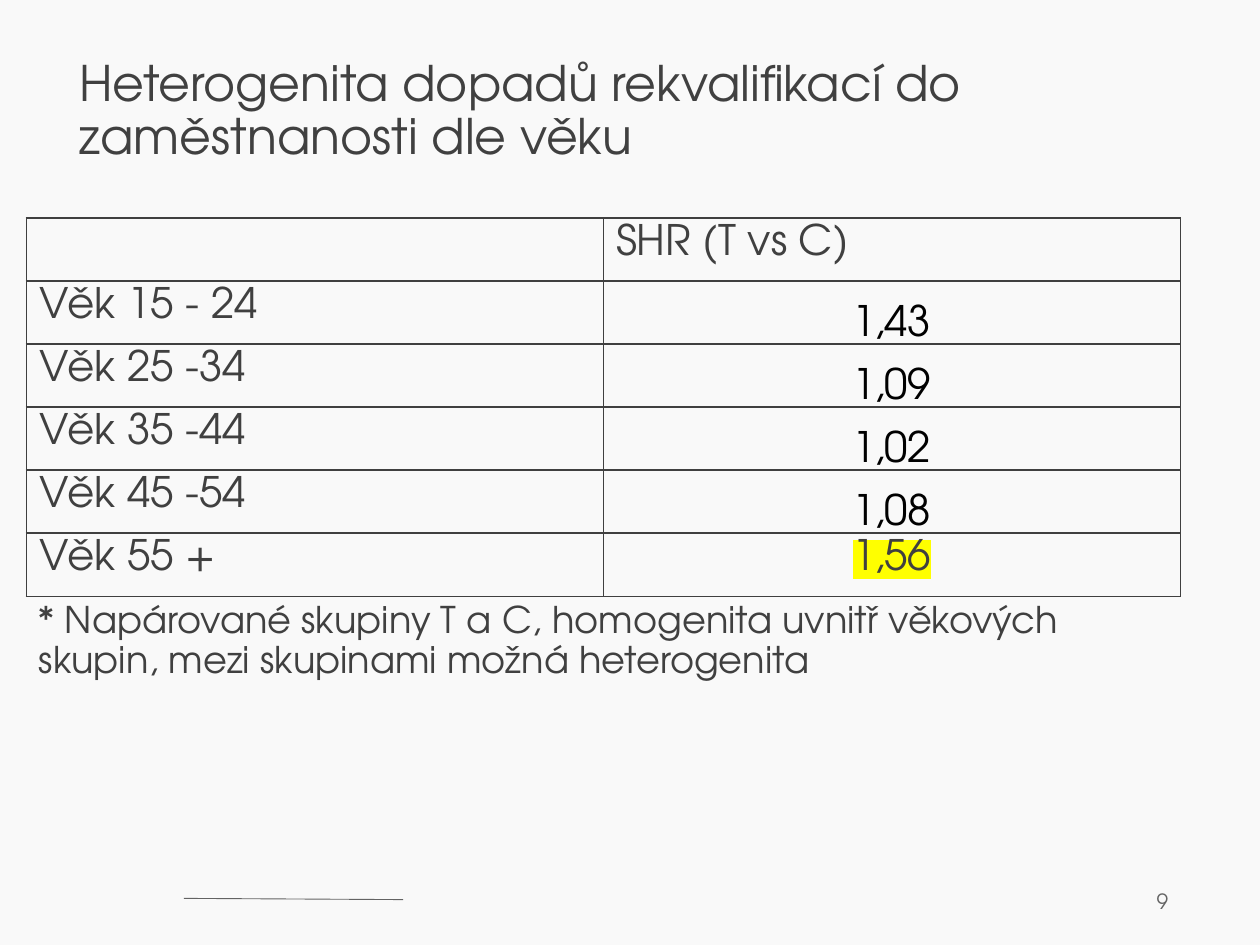
from typing import NamedTuple

from lxml import etree
from pptx import Presentation
from pptx import util as u
from pptx.dml.color import RGBColor
from pptx.enum import shapes, text
from pptx.oxml import ns

PAPER = RGBColor(0xF9, 0xF9, 0xF9)
INK = RGBColor(0x40, 0x40, 0x40)
MUTED = RGBColor(0x63, 0x63, 0x63)
BLACK = RGBColor(0, 0, 0)
YELLOW = RGBColor(0xFF, 0xFF, 0)
FONT = "TeX Gyre Adventor"
LEFT, CENTER, RIGHT = text.PP_ALIGN.LEFT, text.PP_ALIGN.CENTER, text.PP_ALIGN.RIGHT
TOP, MIDDLE, BOTTOM = text.MSO_ANCHOR.TOP, text.MSO_ANCHOR.MIDDLE, text.MSO_ANCHOR.BOTTOM
RATIO = dict(alignment=CENTER, line_spacing=1.1, space_after=u.Pt(12))
TIGHT = dict(margin_left=u.Inches(0.05), margin_right=u.Inches(0.05),
             margin_top=0, margin_bottom=0, vertical_anchor=BOTTOM)


class Label(NamedTuple):
    wording: str
    box: tuple
    size: float
    color: RGBColor = INK
    inset: tuple = (0.1, 0.05)
    anchor: text.MSO_ANCHOR = TOP
    paragraph: dict = dict(line_spacing=0.9)


class AgeGroup(NamedTuple):
    name: str
    ratio: str
    highlighted: bool = False


LABELS = [
    Label("9", (7.12, 6.95, 2.25, 0.4), 12, MUTED, anchor=MIDDLE,
          paragraph=dict(alignment=RIGHT)),
    Label("* Napárované skupiny T a C, homogenita uvnitř věkových skupin, "
          "mezi skupinami možná heterogenita", (0.21, 4.73, 8.74, 1.14), 21),
    Label("Heterogenita dopadů rekvalifikací do zaměstnanosti dle věku",
          (0.63, 0.47, 8.74, 0.91), 28, inset=(0, 0)),
]
AGE_GROUPS = [
    AgeGroup("Věk 15 - 24", "1,43"),
    AgeGroup("Věk 25 -34", "1,09"),
    AgeGroup("Věk 35 -44", "1,02"),
    AgeGroup("Věk 45 -54", "1,08"),
    AgeGroup("Věk 55 +", "1,56", True),
]


def apply(target, values: dict) -> None:
    for name, value in values.items():
        setattr(target, name, value)


def write(frame, wording: str, size: float, color: RGBColor, paragraph: dict):
    line = frame.paragraphs[0]
    apply(line, paragraph)
    run = line.add_run()
    run.text = wording
    apply(run.font, dict(name=FONT, size=u.Pt(size)))
    run.font.color.rgb = color
    return run


def add_label(slide, label: Label) -> None:
    frame = slide.shapes.add_textbox(*map(u.Inches, label.box)).text_frame
    across, down = map(u.Inches, label.inset)
    apply(frame, dict(word_wrap=True, vertical_anchor=label.anchor,
                      margin_left=across, margin_right=across,
                      margin_top=down, margin_bottom=down))
    write(frame, label.wording, label.size, label.color, label.paragraph)


def add_fill(parent, color: RGBColor) -> None:
    fill = etree.SubElement(parent, ns.qn("a:solidFill"))
    etree.SubElement(fill, ns.qn("a:srgbClr"), val=str(color))


def border(cell) -> None:
    properties = cell._tc.get_or_add_tcPr()
    for position, side in enumerate(("lnL", "lnR", "lnT", "lnB")):
        edge = etree.Element(ns.qn(f"a:{side}"), w=str(u.Pt(1)))
        add_fill(edge, INK)
        properties.insert(position, edge)


def highlight(run) -> None:
    mark = etree.Element(ns.qn("a:highlight"))
    etree.SubElement(mark, ns.qn("a:srgbClr"), val=str(YELLOW))
    run.font._element.find(ns.qn("a:solidFill")).addnext(mark)


def fill_cell(cell, wording: str, color: RGBColor = INK, paragraph: dict = {},
              layout: dict = {}):
    cell.fill.background()
    border(cell)
    apply(cell, layout)
    return write(cell.text_frame, wording, 24, color, paragraph)


def add_ratio_table(slide) -> None:
    row_count = len(AGE_GROUPS) + 1
    table = slide.shapes.add_table(
        row_count, 2, u.Inches(0.21), u.Inches(1.73),
        u.Inches(9.16), u.Inches(0.41 * row_count)).table
    apply(table, dict(first_row=False, horz_banding=False))
    fill_cell(table.cell(0, 0), "")
    fill_cell(table.cell(0, 1), "SHR (T vs C)")
    for row, group in enumerate(AGE_GROUPS, 1):
        fill_cell(table.cell(row, 0), group.name)
        ratio = table.cell(row, 1)
        if group.highlighted:
            highlight(fill_cell(ratio, group.ratio, paragraph=dict(alignment=CENTER)))
        else:
            fill_cell(ratio, group.ratio, BLACK, RATIO, TIGHT)


def add_footer_rule(slide) -> None:
    rule = slide.shapes.add_connector(
        shapes.MSO_CONNECTOR.STRAIGHT, *map(u.Inches, (1.46, 7.13, 3.2, 7.14)))
    rule.line.color.rgb = MUTED
    rule.line.width = u.Pt(0.5)
    etree.SubElement(rule._element.spPr, ns.qn("a:effectLst"))


def main() -> None:
    deck = Presentation()
    apply(deck, dict(slide_width=u.Inches(10), slide_height=u.Inches(7.5)))
    slide = deck.slides.add_slide(deck.slide_layouts[6])
    slide.background.fill.solid()
    slide.background.fill.fore_color.rgb = PAPER
    add_footer_rule(slide)
    for label in LABELS:
        add_label(slide, label)
    add_ratio_table(slide)
    deck.save("out.pptx")


if __name__ == "__main__":
    main()
